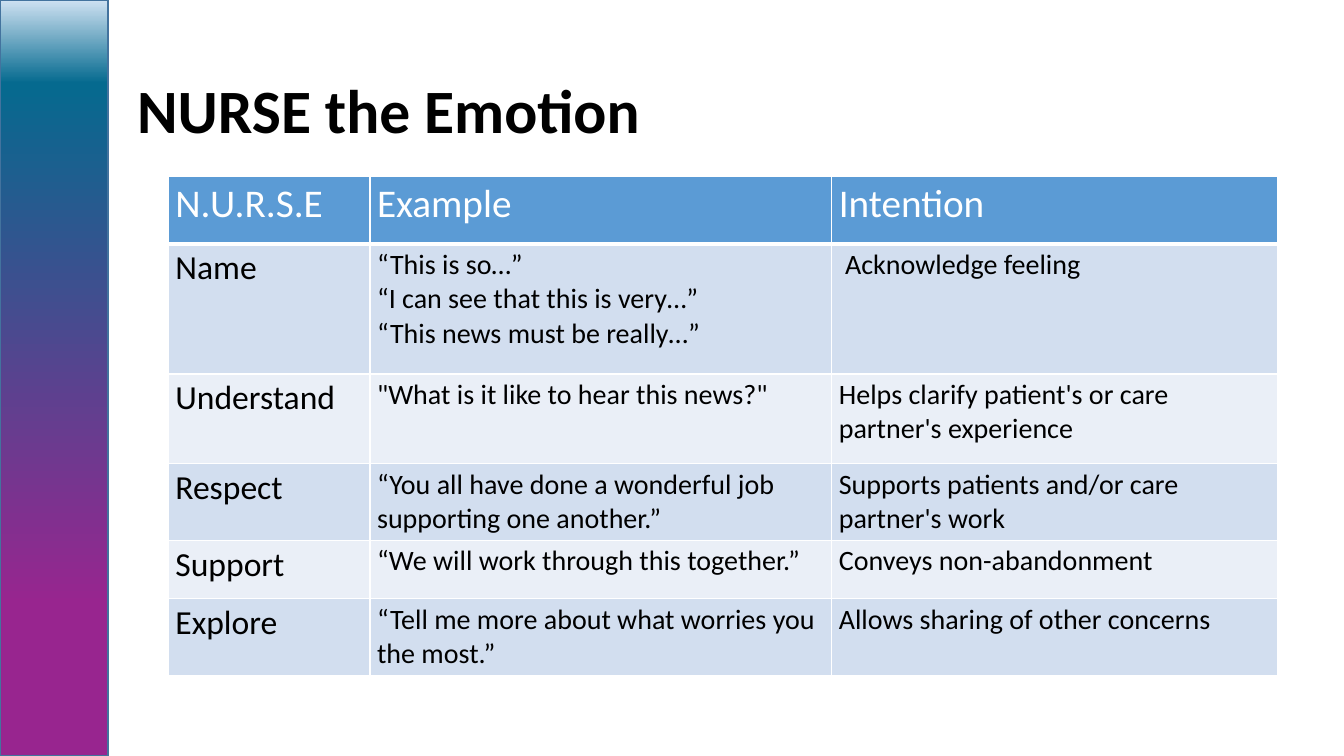
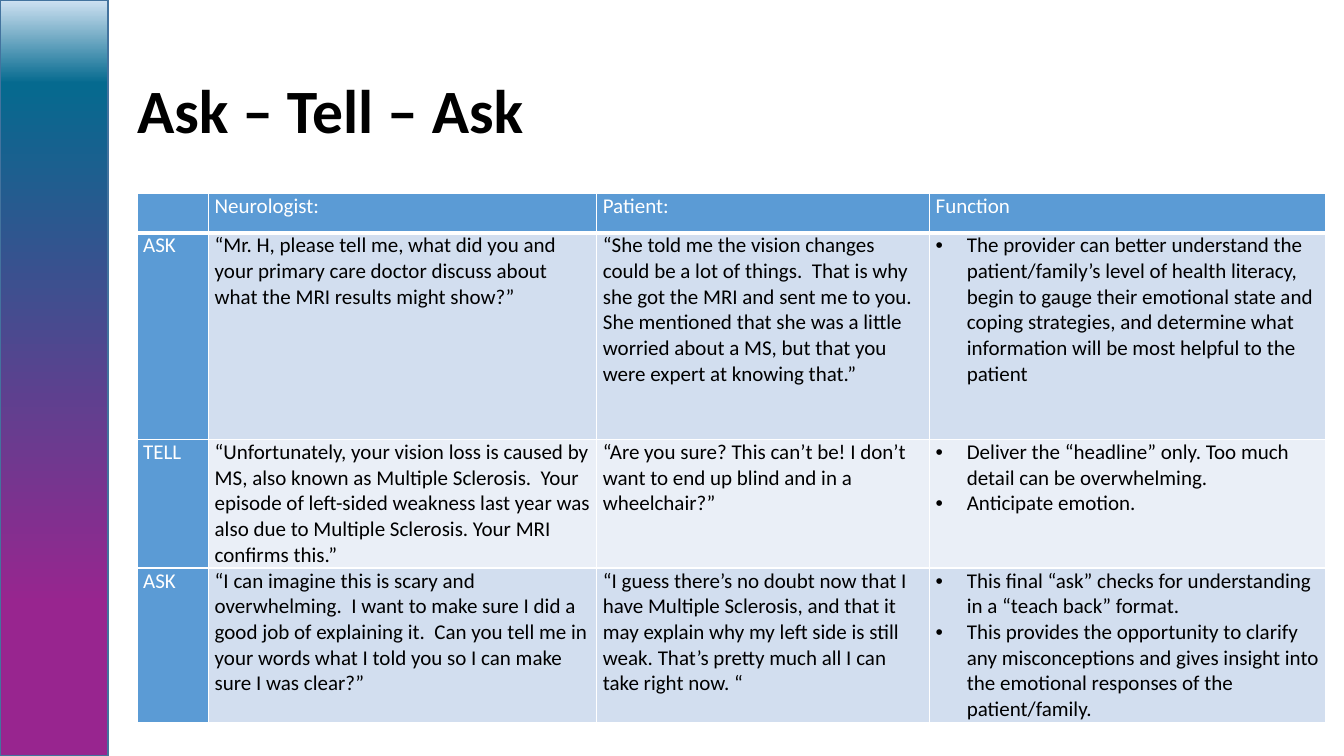
from dataclasses import dataclass

from lxml import etree
from pptx import Presentation
from pptx import util as u
from pptx.dml.color import RGBColor
from pptx.enum import shapes, text
from pptx.oxml.ns import qn

FONT = "Calibri"
BLACK = RGBColor(0x00, 0x00, 0x00)
WHITE = RGBColor(0xFF, 0xFF, 0xFF)
HEADER_BLUE = RGBColor(0x5B, 0x9B, 0xD5)
ROW_BLUE = RGBColor(0xD2, 0xDE, 0xEF)
ROW_PALE = RGBColor(0xEA, 0xEF, 0xF7)
BAND_LINE = RGBColor(0x43, 0x73, 0x9E)
BAND_PURPLE = RGBColor(0x98, 0x25, 0x8F)
BAND_TEAL = RGBColor(0x05, 0x6A, 0x8F)
BAND_SKY = RGBColor(0xCE, 0xE1, 0xF2)
BAND_STOPS = [(20, BAND_PURPLE), (89, BAND_TEAL), (100, BAND_SKY)]


@dataclass
class TableStyle:
    header_size: int
    label_size: int
    body_size: int
    side_margin: float
    top_margin: float
    filled_labels: bool = False
    bullet_column: int = -1


NURSE_STYLE = TableStyle(28, 24, 20, 0.07, 0.04)
ASK_STYLE = TableStyle(15, 15, 15, 0.06, 0, filled_labels=True, bullet_column=3)

NURSE_ROWS = [
    ["N.U.R.S.E", "Example", "Intention"],
    ["Name",
     "“This is so…”\n“I can see that this is very…”\n“This news must be really…”",
     " Acknowledge feeling"],
    ["Understand", "\"What is it like to hear this news?\"",
     "Helps clarify patient's or care partner's experience"],
    ["Respect", "“You all have done a wonderful job supporting one another.”",
     "Supports patients and/or care partner's work"],
    ["Support", "“We will work through this together.”", "Conveys non-abandonment"],
    ["Explore", "“Tell me more about what worries you the most.”",
     "Allows sharing of other concerns"],
]

ASK_ROWS = [
    ["", "Neurologist:", "Patient:", "Function"],
    ["ASK",
     "“Mr. H, please tell me, what did you and your primary care doctor discuss "
     "about what the MRI results might show?”",
     "“She told me the vision changes could be a lot of things.  That is why she "
     "got the MRI and sent me to you.  She mentioned that she was a little worried "
     "about a MS, but that you were expert at knowing that.”",
     "The provider can better understand the patient/family’s level of health "
     "literacy, begin to gauge their emotional state and coping strategies, and "
     "determine what information will be most helpful to the patient"],
    ["TELL",
     "“Unfortunately, your vision loss is caused by MS, also known as Multiple "
     "Sclerosis.  Your episode of left-sided weakness last year was also due to "
     "Multiple Sclerosis. Your MRI confirms this.”",
     "“Are you sure? This can’t be! I don’t want to end up blind and in a "
     "wheelchair?”",
     "Deliver the “headline” only. Too much detail can be overwhelming.\n"
     "Anticipate emotion."],
    ["ASK",
     "“I can imagine this is scary and overwhelming.  I want to make sure I did a "
     "good job of explaining it.  Can you tell me in your words what I told you so "
     "I can make sure I was clear?”",
     "“I guess there’s no doubt now that I have Multiple Sclerosis, and that it may "
     "explain why my left side is still weak. That’s pretty much all I can take "
     "right now. “",
     "This final “ask” checks for understanding  in a “teach back” format.\n"
     "This provides the opportunity to clarify any misconceptions and gives insight "
     "into the emotional responses of the patient/family."],
]


def add_span(para, words, size, color, bold=False):
    span = para.add_run()
    span.text = words
    span.font.name = FONT
    span.font.size = u.Pt(size)
    span.font.bold = bold
    span.font.color.rgb = color


def add_band(page, layout, height):
    band = page.shapes.add_shape(
        shapes.MSO_SHAPE.RECTANGLE, 0, 0, u.Inches(1.07), height)
    band.shadow.inherit = False
    band.line.color.rgb = BAND_LINE
    band.line.width = u.Pt(1)
    band.fill.gradient()
    band.fill.gradient_angle = 90
    stops = next(band.element.iter(qn("a:gsLst")))
    for stop in list(stops):
        stops.remove(stop)
    for percent, color in BAND_STOPS:
        stop = etree.SubElement(stops, qn("a:gs"), pos=str(percent * 1000))
        etree.SubElement(stop, qn("a:srgbClr"), val=str(color))
    layout.shapes.element.insert(2, band.element)


def place_title(layout):
    title = layout.placeholders[0]
    title.left, title.top = u.Inches(1.26), u.Inches(0.4)
    title.width, title.height = u.Inches(11.64), u.Inches(1.45)
    title.text_frame.vertical_anchor = text.MSO_ANCHOR.MIDDLE


def add_page(deck, layout, heading):
    page = deck.slides.add_slide(layout)
    para = page.shapes.title.text_frame.paragraphs[0]
    para.alignment = text.PP_ALIGN.LEFT
    para.line_spacing = 0.9
    add_span(para, heading, 44, BLACK, bold=True)
    return page


def add_bullet(para):
    props = para._p.get_or_add_pPr()
    indent = u.Inches(0.31)
    props.set("marL", str(indent))
    props.set("indent", str(-indent))
    etree.SubElement(props, qn("a:buFont"), typeface="Arial")
    etree.SubElement(props, qn("a:buChar"), char="•")


def set_borders(cell, row):
    props = cell._tc.get_or_add_tcPr()
    widths = {"L": 1, "R": 1, "T": 3 if row == 1 else 1, "B": 3 if row == 0 else 1}
    for side, width in widths.items():
        line = etree.SubElement(props, qn(f"a:ln{side}"), w=str(u.Pt(width)))
        fill = etree.SubElement(line, qn("a:solidFill"))
        etree.SubElement(fill, qn("a:srgbClr"), val=str(WHITE))


def fill_cell(cell, words, row, column, style):
    is_header = row == 0
    is_label = column == 0
    is_strong = is_header or (is_label and style.filled_labels)
    size = (style.header_size if is_header
            else style.label_size if is_label else style.body_size)
    set_borders(cell, row)
    cell.fill.solid()
    cell.fill.fore_color.rgb = (
        HEADER_BLUE if is_strong else ROW_BLUE if row % 2 else ROW_PALE)
    cell.margin_left = cell.margin_right = u.Inches(style.side_margin)
    cell.margin_top = cell.margin_bottom = u.Inches(style.top_margin)
    if not words:
        return
    frame = cell.text_frame
    for number, line in enumerate(words.split("\n")):
        para = frame.add_paragraph() if number else frame.paragraphs[0]
        if column == style.bullet_column and not is_header:
            add_bullet(para)
        add_span(para, line, size, WHITE if is_strong else BLACK)


def add_grid(page, rows, left, top, widths, heights, style):
    grid = page.shapes.add_table(
        len(rows), len(widths), u.Inches(left), u.Inches(top),
        u.Inches(sum(widths)), u.Inches(sum(heights))).table
    grid.first_row = False
    grid.horz_banding = False
    for column, width in zip(grid.columns, widths):
        column.width = u.Inches(width)
    for row, height in zip(grid.rows, heights):
        row.height = u.Inches(height)
    for row, entries in enumerate(rows):
        for column, words in enumerate(entries):
            fill_cell(grid.cell(row, column), words, row, column, style)


def main():
    deck = Presentation()
    deck.slide_width, deck.slide_height = u.Inches(13.33), u.Inches(7.5)
    layout = deck.slide_layouts[5]
    place_title(layout)

    nurse_page = add_page(deck, layout, "NURSE the Emotion")
    add_band(nurse_page, layout, deck.slide_height)
    add_grid(nurse_page, NURSE_ROWS, 1.67, 1.75, [2, 4.58, 4.42],
             [0.67, 1.29, 0.89, 0.58, 0.58, 0.58], NURSE_STYLE)

    ask_page = add_page(deck, layout, "Ask – Tell – Ask")
    add_grid(ask_page, ASK_ROWS, 1.36, 1.92, [0.71, 3.85, 3.3, 3.93],
             [0.39, 2.05, 1.09, 1.45], ASK_STYLE)

    deck.save("out.pptx")


if __name__ == "__main__":
    main()
